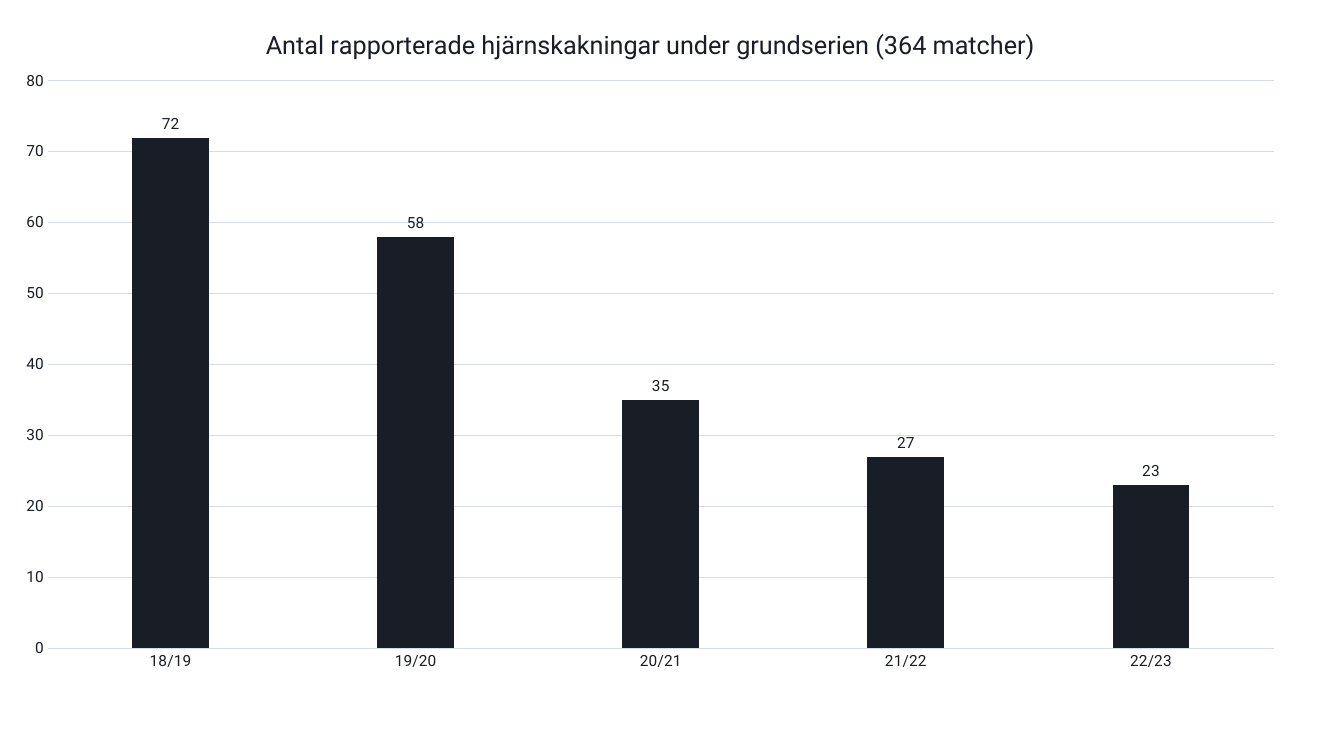
from lxml import etree
from pptx import Presentation
from pptx.chart.data import CategoryChartData
from pptx.dml.color import RGBColor
from pptx.enum.chart import XL_CHART_TYPE, XL_LABEL_POSITION, XL_TICK_MARK
from pptx.oxml.ns import qn
from pptx.util import Inches, Pt

COLUMN = XL_CHART_TYPE.COLUMN_CLUSTERED
OUTSIDE_END = XL_LABEL_POSITION.OUTSIDE_END
NO_TICK = XL_TICK_MARK.NONE
FONT, INK, GRID = "Roboto", "181D26", "D6DBE5"
TITLE = "Antal rapporterade hjärnskakningar under grundserien (364 matcher)"
CONCUSSIONS = {"18/19": 72, "19/20": 58, "20/21": 35, "21/22": 27, "22/23": 23}


def rgb(value):
    """Turn a hex string into a colour."""
    return RGBColor.from_string(value)


def set_attrs(target, attrs):
    """Set each attribute in the dict on the target."""
    for name, value in attrs.items():
        setattr(target, name, value)


def style_font(font, size):
    """Apply the slide's font and ink colour."""
    set_attrs(font, {"name": FONT, "size": Pt(size), "bold": False})
    font.color.rgb = rgb(INK)


def style_line(line):
    """Apply the thin grid line."""
    line.color.rgb = rgb(GRID)
    line.width = Pt(0.75)


def place(element, index, settings):
    """Give a chart part a manual layout as its child at the index."""
    for old in element.findall(qn("c:layout")):
        element.remove(old)
    layout = etree.Element(qn("c:layout"))
    manual = etree.SubElement(layout, qn("c:manualLayout"))
    for name, value in settings.items():
        etree.SubElement(manual, qn(f"c:{name}")).set("val", str(value))
    element.insert(index, layout)


def add_column_chart(slide, values):
    """Add the column chart with its series and labels."""
    data = CategoryChartData()
    data.categories = list(values)
    data.add_series("Series 1", list(values.values()))
    frame = slide.shapes.add_chart(
        COLUMN, Inches(0), Inches(0), Inches(12.89), Inches(6.8), data)
    chart = frame.chart
    chart.has_legend = False
    style_font(chart.font, 10)
    plot = chart.plots[0]
    set_attrs(plot, {"gap_width": 219, "overlap": -27,
                     "vary_by_categories": False, "has_data_labels": True})
    set_attrs(plot.data_labels, {"show_value": True, "position": OUTSIDE_END})
    style_font(plot.data_labels.font, 11)
    fill = plot.series[0].format.fill
    fill.solid()
    fill.fore_color.rgb = rgb(INK)
    place(chart.element.find(f".//{qn('c:plotArea')}"), 0,
          {"layoutTarget": "inner", "xMode": "edge", "yMode": "edge",
           "x": 0.037, "y": 0.118, "w": 0.943, "h": 0.828})
    return chart


def style_axes(chart):
    """Format both axes and the gridlines."""
    for axis in (chart.category_axis, chart.value_axis):
        set_attrs(axis, {"major_tick_mark": NO_TICK, "minor_tick_mark": NO_TICK})
        style_font(axis.tick_labels.font, 11)
    style_line(chart.category_axis.format.line)
    value_axis = chart.value_axis
    set_attrs(value_axis, {"minimum_scale": 0, "maximum_scale": 80,
                           "major_unit": 10, "has_major_gridlines": True})
    value_axis.format.line.fill.background()
    style_line(value_axis.major_gridlines.format.line)


def add_chart_title(chart, text):
    """Write the chart title and place it above the plot."""
    chart.has_title = True
    title = chart.chart_title
    title.include_in_layout = False
    p = title.text_frame.paragraphs[0]
    r = p.add_run()
    r.text = text
    style_font(r.font, 18)
    place(chart.element.find(f".//{qn('c:title')}"), 1,
          {"xMode": "edge", "yMode": "edge", "x": 0.201, "y": 0.034})


def main():
    """Build and save the slide."""
    prs = Presentation()
    set_attrs(prs, {"slide_width": Inches(13.33), "slide_height": Inches(7.5)})
    s = prs.slides.add_slide(prs.slide_layouts[6])
    chart = add_column_chart(s, CONCUSSIONS)
    style_axes(chart)
    add_chart_title(chart, TITLE)
    prs.save("out.pptx")


if __name__ == "__main__":
    main()
